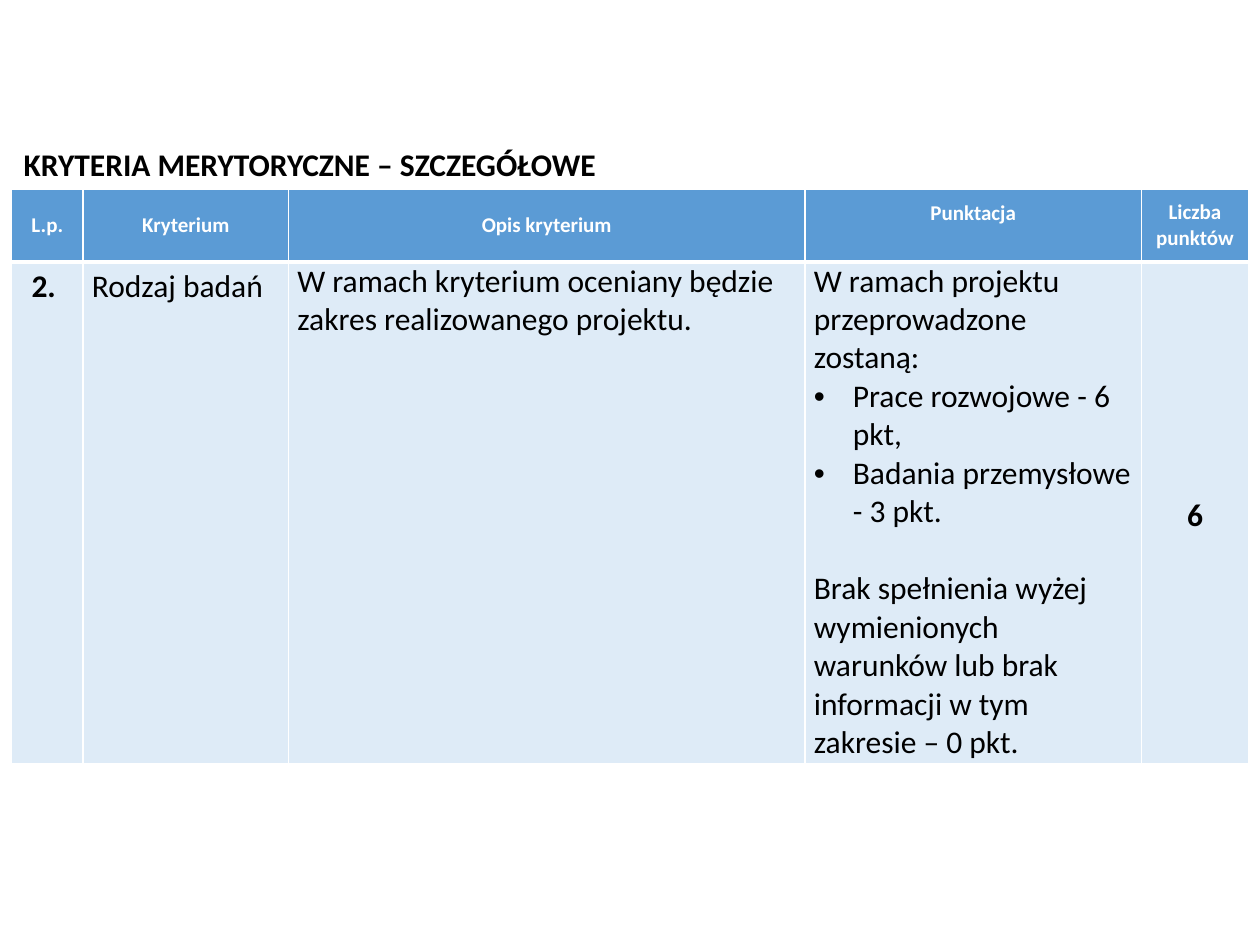
from dataclasses import dataclass

from lxml.etree import SubElement
from pptx import Presentation
from pptx.dml.color import RGBColor
from pptx.enum.text import MSO_ANCHOR as Anchor, MSO_AUTO_SIZE as AutoSize, PP_ALIGN as Align
from pptx.oxml import parse_xml
from pptx.oxml.ns import nsdecls, qn
from pptx.util import Inches, Pt


@dataclass(frozen=True)
class Theme:
    font: str = "Calibri"
    header_size: int = 12
    body_size: int = 18
    header_fill: str = "5B9BD5"
    body_fill: str = "DEEBF7"
    white: str = "FFFFFF"
    black: str = "000000"
    thin: int = 1
    thick: int = 3


THEME = Theme()
COLUMNS = (0.57, 1.63, 4.1, 2.67, 0.85)
ROWS = (0.58, 3.98)
HEADERS = ("L.p.", "Kryterium", "Opis kryterium", "Punktacja", "Liczba punktów")
CRITERION = (
    (["2. "], dict(bold=True, align=Align.CENTER, spacing=1.15)),
    (["Rodzaj badań"], dict(spacing=1.15)),
    (["W ramach kryterium oceniany będzie zakres realizowanego projektu."], {}),
    ([
        "W ramach projektu przeprowadzone zostaną:",
        ("Prace rozwojowe - 6 pkt,", dict(bullet=True)),
        ("Badania przemysłowe - 3 pkt.", dict(bullet=True)),
        ("Brak spełnienia wyżej wymienionych warunków lub brak informacji "
         "w tym zakresie – 0 pkt.", dict(before=22)),
    ], {}),
    (["6"], dict(bold=True, align=Align.CENTER, spacing=1.15)),
)


def write(para, text, size=THEME.body_size, color=THEME.black, bold=False,
          align=Align.LEFT, spacing=None, before=0, bullet=False):
    para.alignment = align
    para.line_spacing = spacing
    para.space_before = Pt(before)
    if bullet:
        props = para._p.get_or_add_pPr()
        props.set("marL", str(Inches(0.31)))
        props.set("indent", str(-Inches(0.31)))
        SubElement(props, qn("a:buFont"), typeface="Arial")
        SubElement(props, qn("a:buChar"), char="•")
    span = para.add_run()
    span.text = text
    span.font.name = THEME.font
    span.font.size = Pt(size)
    span.font.bold = bold
    span.font.color.rgb = RGBColor.from_string(color)


def fill_cell(cell, color, top, bottom):
    cell.fill.solid()
    cell.fill.fore_color.rgb = RGBColor.from_string(color)
    widths = {"lnL": THEME.thin, "lnR": THEME.thin, "lnT": top, "lnB": bottom}
    props = cell._tc.get_or_add_tcPr()
    for index, (side, width) in enumerate(widths.items()):
        props.insert(index, parse_xml(
            f'<a:{side} {nsdecls("a")} w="{Pt(width)}"><a:solidFill>'
            f'<a:srgbClr val="{THEME.white}"/></a:solidFill></a:{side}>'))


def add_heading(page, left, top, width, height):
    box = page.shapes.add_textbox(left, top, width, height)
    frame = box.text_frame
    frame.word_wrap = False
    frame.auto_size = AutoSize.SHAPE_TO_FIT_TEXT
    frame.vertical_anchor = Anchor.MIDDLE
    write(frame.paragraphs[0], "KRYTERIA MERYTORYCZNE – SZCZEGÓŁOWE", bold=True)


def add_criteria_table(page, left, top, width, height):
    table = page.shapes.add_table(len(ROWS), len(COLUMNS), left, top, width, height).table
    for column, size in zip(table.columns, COLUMNS):
        column.width = Inches(size)
    for row, size in zip(table.rows, ROWS):
        row.height = Inches(size)

    for cell, text in zip(table.rows[0].cells, HEADERS):
        fill_cell(cell, THEME.header_fill, THEME.thin, THEME.thick)
        cell.vertical_anchor = Anchor.MIDDLE
        write(cell.text_frame.paragraphs[0], text, size=THEME.header_size,
              color=THEME.white, bold=True, align=Align.CENTER)
    table.cell(0, HEADERS.index("Punktacja")).margin_bottom = Inches(0.25)

    for cell, (items, style) in zip(table.rows[1].cells, CRITERION):
        fill_cell(cell, THEME.body_fill, THEME.thick, THEME.thin)
        cell.margin_left = cell.margin_right = Inches(0.07)
        cell.margin_top = cell.margin_bottom = 0
        frame = cell.text_frame
        for index, item in enumerate(items):
            text, extra = (item, {}) if isinstance(item, str) else item
            para = frame.add_paragraph() if index else frame.paragraphs[0]
            write(para, text, **style, **extra)
    table.cell(1, len(COLUMNS) - 1).vertical_anchor = Anchor.MIDDLE


def main():
    deck = Presentation()
    deck.slide_width, deck.slide_height = Inches(10), Inches(7.5)
    page = deck.slides.add_slide(deck.slide_layouts[6])
    add_criteria_table(page, Inches(0.09), Inches(1.5),
                       Inches(sum(COLUMNS)), Inches(sum(ROWS)))
    add_heading(page, Inches(0.09), Inches(1.1), Inches(4.9), Inches(0.4))
    deck.save("out.pptx")


if __name__ == "__main__":
    main()
